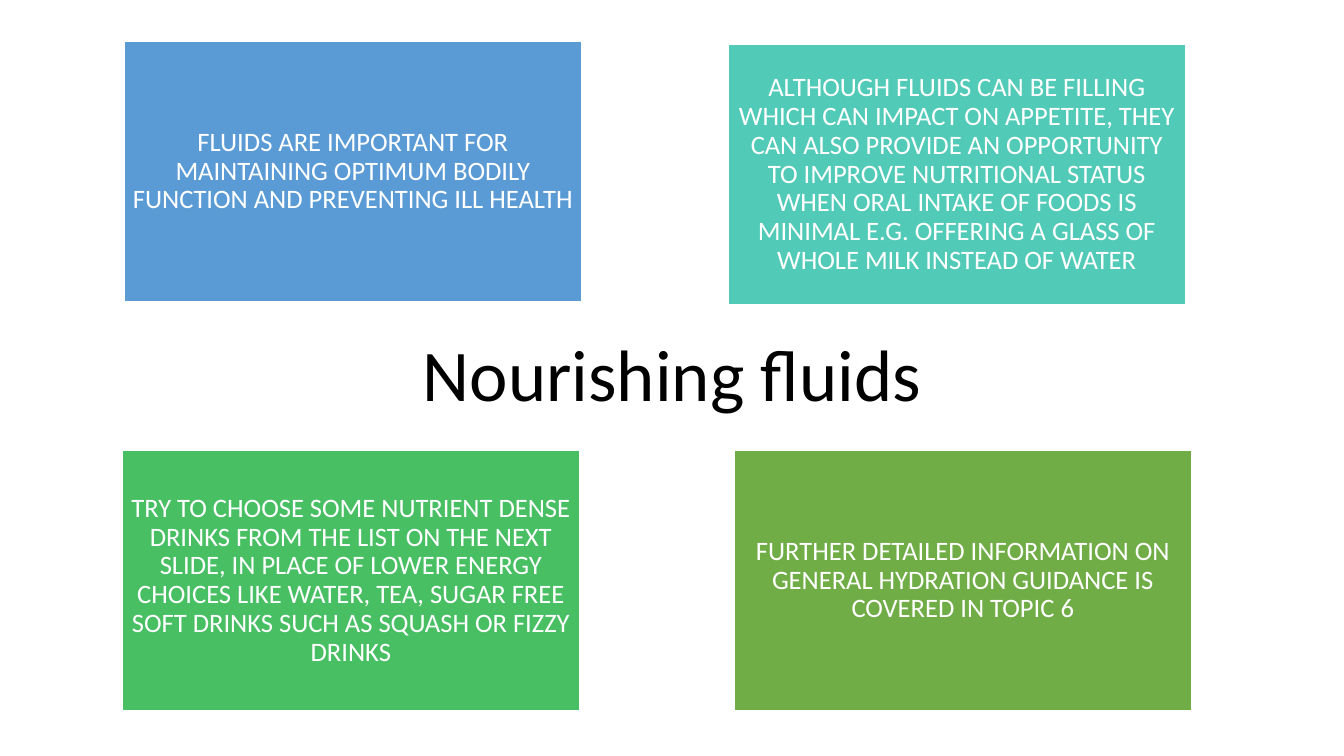
import pptx
import pptx.dml.color
import pptx.enum.shapes
import pptx.enum.text
import pptx.util

SLIDE_WIDTH = pptx.util.Inches(13.33)
SLIDE_HEIGHT = pptx.util.Inches(7.5)
CARD_WIDTH, CARD_HEIGHT = 34.06, 34.4
CARDS = [
    (9.23, 5.47, "5B9BD5",
     "FLUIDS ARE IMPORTANT FOR MAINTAINING OPTIMUM BODILY FUNCTION AND PREVENTING ILL HEALTH"),
    (54.16, 5.87, "52CAB8",
     "ALTHOUGH FLUIDS CAN BE FILLING WHICH CAN IMPACT ON APPETITE, THEY CAN ALSO PROVIDE "
     "AN OPPORTUNITY TO IMPROVE NUTRITIONAL STATUS WHEN ORAL INTAKE OF FOODS IS MINIMAL "
     "E.G. OFFERING A GLASS OF WHOLE MILK INSTEAD OF WATER"),
    (9.08, 59.6, "49BF64",
     "TRY TO CHOOSE SOME NUTRIENT DENSE DRINKS FROM THE LIST ON THE NEXT SLIDE, IN PLACE OF "
     "LOWER ENERGY CHOICES LIKE WATER, TEA, SUGAR FREE SOFT DRINKS SUCH AS SQUASH OR FIZZY DRINKS"),
    (54.61, 59.6, "70AD47",
     "FURTHER DETAILED INFORMATION ON GENERAL HYDRATION GUIDANCE IS COVERED IN TOPIC 6"),
]


def color(hex_string):
    """Return the colour for a hex string."""
    return pptx.dml.color.RGBColor.from_string(hex_string)


def place(left, top, width, height):
    """Turn percentages of the slide into a box in slide units."""
    return (int(SLIDE_WIDTH * left / 100), int(SLIDE_HEIGHT * top / 100),
            int(SLIDE_WIDTH * width / 100), int(SLIDE_HEIGHT * height / 100))


def write_text(shape, text, size, text_color):
    """Write one centred paragraph in the middle of a shape."""
    frame = shape.text_frame
    frame.text = text
    frame.word_wrap = True
    frame.auto_size = pptx.enum.text.MSO_AUTO_SIZE.NONE
    frame.vertical_anchor = pptx.enum.text.MSO_ANCHOR.MIDDLE
    paragraph = frame.paragraphs[0]
    paragraph.alignment = pptx.enum.text.PP_ALIGN.CENTER
    paragraph.line_spacing = 0.9
    font = paragraph.runs[0].font
    font.name = "Calibri"
    font.size = pptx.util.Pt(size)
    font.color.rgb = color(text_color)


def add_title(slide, box, text):
    """Fit the title placeholder into the box."""
    title = slide.shapes.title
    title.left, title.top, title.width, title.height = box
    write_text(title, text, 52, "000000")


def add_card(slide, box, fill, text):
    """Draw a coloured card filling the box."""
    card = slide.shapes.add_shape(pptx.enum.shapes.MSO_SHAPE.RECTANGLE, *box)
    card.shadow.inherit = False
    card.fill.solid()
    card.fill.fore_color.rgb = color(fill)
    card.line.color.rgb = color("FFFFFF")
    card.line.width = pptx.util.Pt(1)
    frame = card.text_frame
    frame.margin_left = frame.margin_right = pptx.util.Inches(0.08)
    frame.margin_top = frame.margin_bottom = pptx.util.Inches(0.08)
    write_text(card, text, 19, "FFFFFF")


def main():
    """Build and save the slide."""
    presentation = pptx.Presentation()
    presentation.slide_width = SLIDE_WIDTH
    presentation.slide_height = SLIDE_HEIGHT
    slide = presentation.slides.add_slide(presentation.slide_layouts.get_by_name("Title Only"))
    for left, top, fill, text in CARDS:
        add_card(slide, place(left, top, CARD_WIDTH, CARD_HEIGHT), fill, text)
    add_title(slide, place(0, 41.73, 100, 16.53), "Nourishing fluids")
    presentation.save("out.pptx")


if __name__ == "__main__":
    main()
